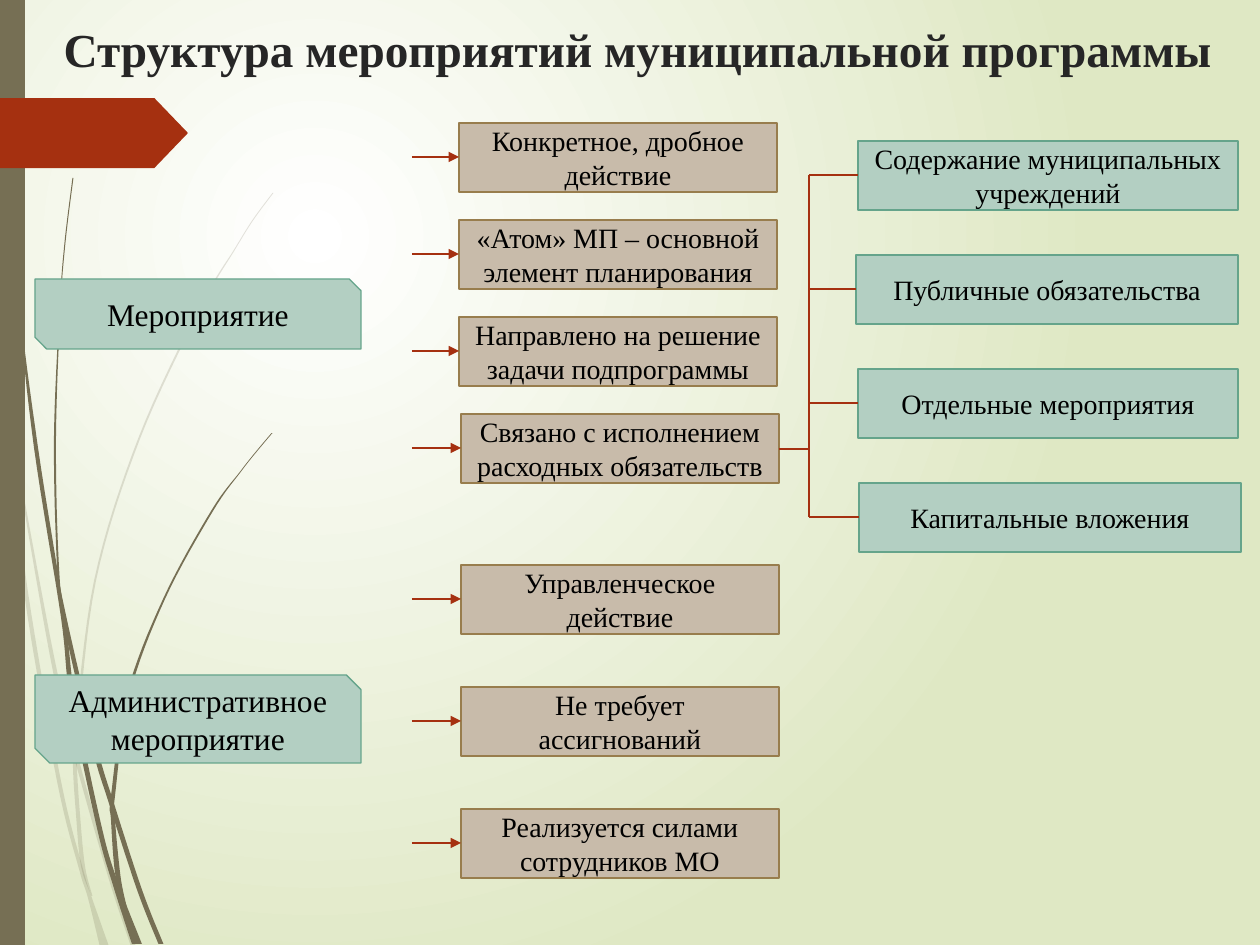
"""Builds a slide on the structure of the measures in a municipal programme."""
import lxml.etree
import pptx
import pptx.dml.color
import pptx.enum.shapes
import pptx.enum.text
import pptx.oxml.ns
import pptx.util

EMU_PER_PX = 914400 / 126
WHITE = pptx.dml.color.RGBColor(0xFF, 0xFF, 0xFF)
PALE_GREEN = pptx.dml.color.RGBColor(0xDF, 0xE8, 0xC4)
OLIVE = pptx.dml.color.RGBColor(0x76, 0x6F, 0x54)
RED = pptx.dml.color.RGBColor(0xA5, 0x30, 0x10)
GREEN = pptx.dml.color.RGBColor(0xB3, 0xCF, 0xC2)
GREEN_LINE = pptx.dml.color.RGBColor(0x65, 0xA4, 0x8B)
TAN = pptx.dml.color.RGBColor(0xC8, 0xBB, 0xAA)
TAN_LINE = pptx.dml.color.RGBColor(0x98, 0x7D, 0x4D)
BLACK = pptx.dml.color.RGBColor(0, 0, 0)
DARK_GREY = pptx.dml.color.RGBColor(0x26, 0x26, 0x26)
SHAPES = pptx.enum.shapes.MSO_SHAPE
ANCHORS = pptx.enum.text.MSO_ANCHOR
qn = pptx.oxml.ns.qn

presentation = pptx.Presentation()
presentation.slide_width = pptx.util.Inches(10)
presentation.slide_height = pptx.util.Inches(7.5)
slide = presentation.slides.add_slide(presentation.slide_layouts[6])


def add_box(text, left, top, width, height, kind=SHAPES.RECTANGLE, fill=None, line=None,
            size=16, color=BLACK, bold=False, anchor=ANCHORS.MIDDLE):
    bounds = [round(px * EMU_PER_PX) for px in (left, top, width, height)]
    if fill is None:
        shape = slide.shapes.add_textbox(*bounds)
    else:
        shape = slide.shapes.add_shape(kind, *bounds)
        shape.shadow.inherit = False
        shape.fill.solid()
        shape.fill.fore_color.rgb = fill
        if line is None:
            shape.line.fill.background()
        else:
            shape.line.color.rgb = line
            shape.line.width = pptx.util.Pt(0.75)
    if text:
        frame = shape.text_frame
        frame.word_wrap = True
        frame.vertical_anchor = anchor
        paragraph = frame.paragraphs[0]
        paragraph.alignment = pptx.enum.text.PP_ALIGN.CENTER
        run = paragraph.add_run()
        run.text = text
        run.font.name = "Times New Roman"
        run.font.size = pptx.util.Pt(size)
        run.font.bold = bold
        run.font.color.rgb = color
    return shape


def add_line(x1, y1, x2, y2, arrow=False):
    ends = [round(px * EMU_PER_PX) for px in (x1, y1, x2, y2)]
    connector = slide.shapes.add_connector(pptx.enum.shapes.MSO_CONNECTOR.STRAIGHT, *ends)
    connector.line.color.rgb = RED
    connector.line.width = pptx.util.Pt(1.25)
    if arrow:
        outline = connector.line._get_or_add_ln()
        lxml.etree.SubElement(outline, qn("a:tailEnd"), type="triangle")
    lxml.etree.SubElement(connector._element.spPr, qn("a:effectLst"))


background = slide.background.fill
background.gradient()
for stop, color in zip(background.gradient_stops, (WHITE, PALE_GREEN)):
    stop.color.rgb = color
gradient = slide._element.find(".//" + qn("a:gradFill"))
gradient.remove(gradient.find(qn("a:lin")))
circle = lxml.etree.SubElement(gradient, qn("a:path"), path="circle")
lxml.etree.SubElement(circle, qn("a:fillToRect"), l="50000", t="50000", r="100000", b="100000")

LIGHT_BLADES = [
    [(13, 440, 1), (52, 656, 4), (74, 749, 4), (109, 873, 4), (133, 945, 5)],
    [(10, 441, 1), (26, 592, 4), (59, 781, 4), (81, 869, 4), (90, 898, 4), (104, 945, 9)],
    [(273, 193, 1), (253, 220, 1), (235, 249, 1), (200, 308, 2), (139, 439, 2), (95, 581, 2),
     (76, 736, 3), (75, 767, 4), (78, 814, 4), (83, 866, 4), (92, 896, 1)],
]
DARK_BLADES = [
    [(3, 0, 1), (7, 138, 1), (18, 293, 1), (36, 447, 4), (63, 617, 4), (73, 701, 5),
     (100, 830, 5), (116, 885, 6), (137, 944, 10)],
    [(73, 178, 1), (65, 243, 1), (60, 309, 1), (55, 440, 2), (58, 566, 2), (64, 615, 4),
     (94, 745, 5), (112, 805, 5), (140, 891, 5), (161, 944, 5)],
    [(272, 433, 1), (256, 452, 1), (241, 471, 1), (212, 511, 2), (164, 599, 2), (128, 695, 3),
     (113, 796, 4), (113, 820, 4), (118, 876, 5), (126, 906, 1)],
]
STEPS = 8
for blades, opacity in ((LIGHT_BLADES, 20), (DARK_BLADES, 100)):
    for knots in blades:
        padded = [knots[0], *knots, knots[-1]]
        curve = []
        for a, b, c, d in zip(padded, padded[1:], padded[2:], padded[3:]):
            for t in (step / STEPS for step in range(STEPS)):
                curve.append([q + ((r - p) * t + (2 * p - 5 * q + 4 * r - s) * t ** 2
                                   + (3 * q - p - 3 * r + s) * t ** 3) / 2
                              for p, q, r, s in zip(a, b, c, d)])
        curve.append(knots[-1])
        edges = [(x - width / 2, y) for x, y, width in curve]
        edges += [(x + width / 2, y) for x, y, width in reversed(curve)]
        points = [(round(x * EMU_PER_PX), round(y * EMU_PER_PX)) for x, y in edges]
        builder = slide.shapes.build_freeform(*points[0])
        builder.add_line_segments(points[1:])
        blade = builder.convert_to_shape()
        blade.shadow.inherit = False
        blade.line.fill.background()
        blade.fill.solid()
        blade.fill.fore_color.rgb = OLIVE
        if opacity < 100:
            color_element = blade._element.spPr.find(".//" + qn("a:srgbClr"))
            lxml.etree.SubElement(color_element, qn("a:alpha"), val=str(opacity * 1000))

add_box("", 0, 0, 25, 945, fill=OLIVE)
banner = add_box("", 0, 98, 188, 70, kind=SHAPES.PENTAGON, fill=RED)
banner.adjustments[0] = 0.48
add_box("Структура мероприятий муниципальной программы", 15, 14, 1245, 139,
        size=27, color=DARK_GREY, bold=True, anchor=ANCHORS.TOP)

for text, top, height in (("Мероприятие", 279, 70), ("Административное мероприятие", 675, 88)):
    add_box(text, 35, top, 326, height, kind=SHAPES.SNIP_2_DIAG_RECTANGLE,
            fill=GREEN, line=GREEN_LINE, size=18)

BOX_HEIGHT = 69
MIDDLE = BOX_HEIGHT // 2
FEATURES = [
    (123, 97, [(459, "Конкретное, дробное действие"),
               (459, "«Атом» МП – основной элемент планирования"),
               (459, "Направлено на решение задачи подпрограммы"),
               (461, "Связано с исполнением расходных обязательств")]),
    (565, 122, [(461, "Управленческое действие"),
                (461, "Не требует ассигнований"),
                (461, "Реализуется силами сотрудников МО")]),
]
for first_top, pitch, features in FEATURES:
    for index, (left, text) in enumerate(features):
        top = first_top + index * pitch
        add_box(text, left, top, 318, BOX_HEIGHT, fill=TAN, line=TAN_LINE)
        add_line(412, top + MIDDLE, left, top + MIDDLE, arrow=True)

SPINE = 809
OBLIGATIONS = [
    (858, 380, "Содержание муниципальных учреждений"),
    (856, 382, "Публичные обязательства"),
    (858, 380, "Отдельные мероприятия"),
    (859, 382, "Капитальные вложения"),
]
for index, (left, width, text) in enumerate(OBLIGATIONS):
    top = 141 + index * 114
    add_box(text, left, top, width, BOX_HEIGHT, fill=GREEN, line=GREEN_LINE)
    add_line(SPINE, top + MIDDLE, left, top + MIDDLE)
add_line(779, 449, SPINE, 449)
add_line(SPINE, 517, SPINE, 175)

presentation.save("out.pptx")
